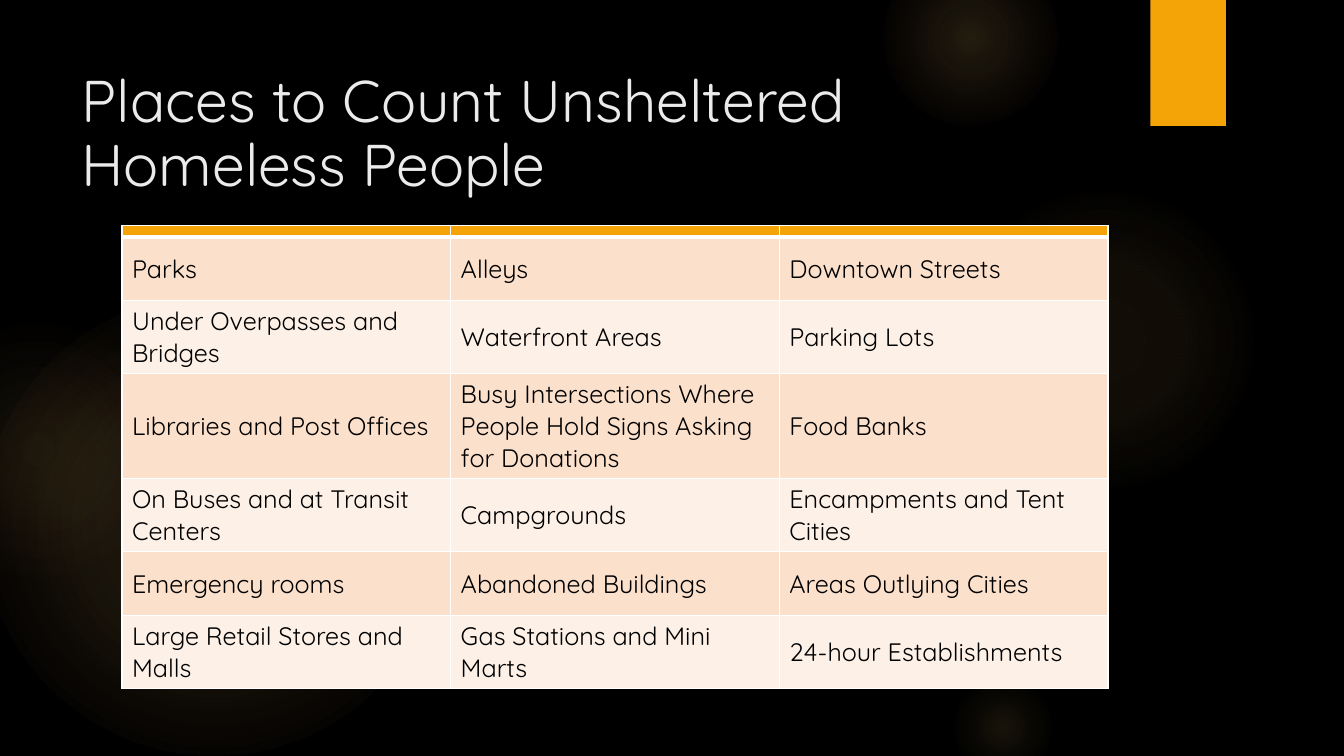
"""Build a slide with a table of places to count unsheltered homeless people."""
import pptx
import pptx.dml.color
import pptx.enum.shapes
import pptx.enum.text
import pptx.oxml
import pptx.oxml.ns
import pptx.util

Inches = pptx.util.Inches
Shapes = pptx.enum.shapes.MSO_SHAPE
Anchor = pptx.enum.text.MSO_ANCHOR
NAMESPACE = pptx.oxml.ns.nsdecls("a")


def paint(fill, color):
    fill.solid()
    fill.fore_color.rgb = pptx.dml.color.RGBColor.from_string(color)


def write(frame, text, size, color, anchor):
    frame.word_wrap = True
    frame.vertical_anchor = anchor
    run = frame.paragraphs[0].add_run()
    run.text = text
    run.font.name = "Quicksand"
    run.font.size = pptx.util.Pt(size)
    paint(run.font.fill, color)


presentation = pptx.Presentation()
presentation.slide_width = Inches(13.33)
presentation.slide_height = Inches(7.5)
slide = presentation.slides.add_slide(presentation.slide_layouts[6])
paint(slide.background.fill, "000000")

GOLD = "FAC96A"
glows = [
    (-0.17, 2.92, 4.58, [(0, GOLD, 11), (36, GOLD, 10), (75, GOLD, 0)]),
    (-0.92, 3.17, 2.58, [(0, GOLD, 8), (36, GOLD, 5), (71, "F59B74", 0)]),
    (9.41, 1.83, 3.08, [(0, GOLD, 7), (36, GOLD, 6), (69, GOLD, 0)]),
    (8.75, -0.5, 1.75, [(0, GOLD, 14), (36, GOLD, 7), (73, GOLD, 0)]),
    (9.41, 6.67, 1.08, [(0, GOLD, 10), (31, GOLD, 5), (66, GOLD, 0)]),
]
for left, top, size, stops in glows:
    glow = slide.shapes.add_shape(
        Shapes.OVAL, Inches(left), Inches(top), Inches(size), Inches(size))
    glow.shadow.inherit = False
    glow.line.fill.background()
    stop_list = "".join(
        f'<a:gs pos="{position * 1000}"><a:srgbClr val="{color}">'
        f'<a:alpha val="{opacity * 1000}"/></a:srgbClr></a:gs>'
        for position, color, opacity in stops)
    gradient = pptx.oxml.parse_xml(
        f'<a:gradFill {NAMESPACE} rotWithShape="1"><a:gsLst>{stop_list}</a:gsLst>'
        '<a:path path="circle"><a:fillToRect l="50000" t="50000" r="50000" b="50000"/>'
        '</a:path></a:gradFill>')
    glow.element.spPr.find(pptx.oxml.ns.qn("a:prstGeom")).addnext(gradient)

ribbon = slide.shapes.add_shape(
    Shapes.RECTANGLE, Inches(11.41), 0, Inches(0.75), Inches(1.25))
ribbon.shadow.inherit = False
ribbon.line.fill.background()
paint(ribbon.fill, "F5A408")

title = slide.shapes.add_textbox(Inches(0.71), Inches(0.5), Inches(10.29), Inches(1.53))
write(title.text_frame, "Places to Count Unsheltered Homeless People", 42, "EBEBEB",
      Anchor.MIDDLE)
title.text_frame.auto_size = pptx.enum.text.MSO_AUTO_SIZE.TEXT_TO_FIT_SHAPE

places = [
    ("", "", ""),
    ("Parks", "Alleys", "Downtown Streets"),
    ("Under Overpasses and Bridges", "Waterfront Areas", "Parking Lots"),
    ("Libraries and Post Offices",
     "Busy Intersections Where People Hold Signs Asking for Donations", "Food Banks"),
    ("On Buses and at Transit Centers", "Campgrounds", "Encampments and Tent Cities"),
    ("Emergency rooms", "Abandoned Buildings", "Areas Outlying Cities"),
    ("Large Retail Stores and Malls", "Gas Stations and Mini Marts",
     "24-hour Establishments"),
]
HEADER_HEIGHT, ROW_HEIGHT = 0.11, 0.63
table = slide.shapes.add_table(
    len(places), 3, Inches(1.21), Inches(2.24), Inches(9.78),
    Inches(HEADER_HEIGHT + ROW_HEIGHT * (len(places) - 1))).table
for row_index, names in enumerate(places):
    is_header = row_index == 0
    table.rows[row_index].height = Inches(HEADER_HEIGHT if is_header else ROW_HEIGHT)
    band = "F5A408" if is_header else "FBE0CC" if row_index % 2 else "FDF0E7"
    for column_index, name in enumerate(names):
        cell = table.cell(row_index, column_index)
        properties = cell._tc.get_or_add_tcPr()
        widths = {"L": 1, "R": 1, "T": 3 if row_index == 1 else 1, "B": 3 if is_header else 1}
        for side, width in widths.items():
            properties.append(pptx.oxml.parse_xml(
                f'<a:ln{side} {NAMESPACE} w="{width * 12700}"><a:solidFill>'
                f'<a:srgbClr val="FFFFFF"/></a:solidFill></a:ln{side}>'))
        paint(cell.fill, band)
        if is_header:
            cell.margin_top = cell.margin_bottom = Inches(0.04)
            cell.text_frame.paragraphs[0]._p.append(
                pptx.oxml.parse_xml(f'<a:endParaRPr {NAMESPACE} sz="100"/>'))
        else:
            write(cell.text_frame, name, 18, "000000", Anchor.MIDDLE)
            cell.vertical_anchor = Anchor.MIDDLE

presentation.save("out.pptx")
